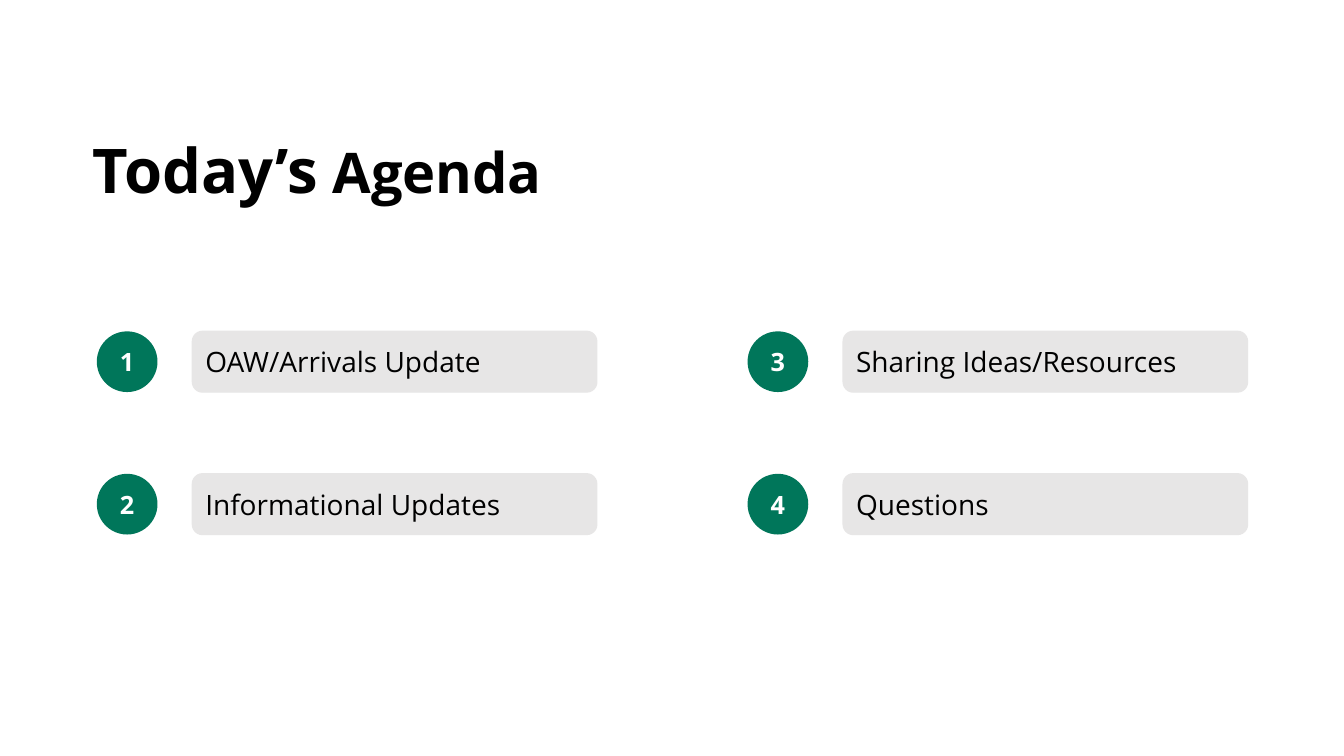
from pptx import Presentation
from pptx.dml.color import RGBColor
from pptx.enum.shapes import MSO_SHAPE as Shape
from pptx.enum.text import MSO_ANCHOR as Anchor, MSO_AUTO_SIZE as Fit, PP_ALIGN as Align
from pptx.util import Cm, Pt

TITLE = [("Today’s", 44), (" Agenda", 40)]
ITEMS = [
    "OAW/Arrivals Update",
    "Informational Updates",
    "Sharing Ideas/Resources",
    "Questions",
]
FONT = "Open Sans"
GREEN, GREY, BLACK, WHITE = "00765A", "E7E6E6", "000000", "FFFFFF"

ROWS = 2
LEFT, TOP = 2.44, 8.35
COL_STEP, ROW_STEP = 16.4, 3.59
SIZE, BAR_SHIFT, BAR_WIDTH = 1.53, 2.41, 10.19


def color(code):
    return RGBColor.from_string(code)


def style(font, size, code, bold=False):
    font.name, font.size, font.bold = FONT, Pt(size), bold
    font.color.rgb = color(code)


def add_box(slide, kind, x, y, width, fill, text, align):
    """Add a filled shape with one line of text and return it."""
    box = slide.shapes.add_shape(kind, Cm(x), Cm(y), Cm(width), Cm(SIZE))
    box.shadow.inherit = False
    box.fill.solid()
    box.fill.fore_color.rgb = color(fill)
    box.line.fill.background()
    frame = box.text_frame
    frame.text = text
    frame.word_wrap = True
    frame.vertical_anchor = Anchor.MIDDLE
    frame.paragraphs[0].alignment = align
    return box


def add_title(slide):
    title = slide.shapes.title
    title.left, title.top = Cm(2.08), Cm(3.3)
    title.width, title.height = Cm(18.49), Cm(2.13)
    frame = title.text_frame
    frame.auto_size = Fit.SHAPE_TO_FIT_TEXT
    frame.vertical_anchor = Anchor.MIDDLE
    line = frame.paragraphs[0]
    line.alignment = Align.LEFT
    line.line_spacing = 0.9
    for text, size in TITLE:
        run = line.add_run()
        run.text = text
        style(run.font, size, BLACK, True)


def add_item(slide, index, text):
    col, row = divmod(index, ROWS)
    x, y = LEFT + col * COL_STEP, TOP + row * ROW_STEP
    disc = add_box(slide, Shape.OVAL, x, y, SIZE, GREEN, str(index + 1), Align.CENTER)
    style(disc.text_frame.paragraphs[0].font, 18, WHITE, True)
    bar = add_box(slide, Shape.ROUNDED_RECTANGLE, x + BAR_SHIFT, y, BAR_WIDTH,
                  GREY, text, Align.LEFT)
    bar.line.color.rgb = color(GREY)
    bar.line.width = Pt(1)
    style(bar.text_frame.paragraphs[0].font, 20, BLACK)


def main():
    deck = Presentation()
    deck.slide_width, deck.slide_height = Cm(33.87), Cm(19.05)
    slide = deck.slides.add_slide(deck.slide_layouts[5])
    add_title(slide)
    for index, text in enumerate(ITEMS):
        add_item(slide, index, text)
    deck.save("out.pptx")


if __name__ == "__main__":
    main()
